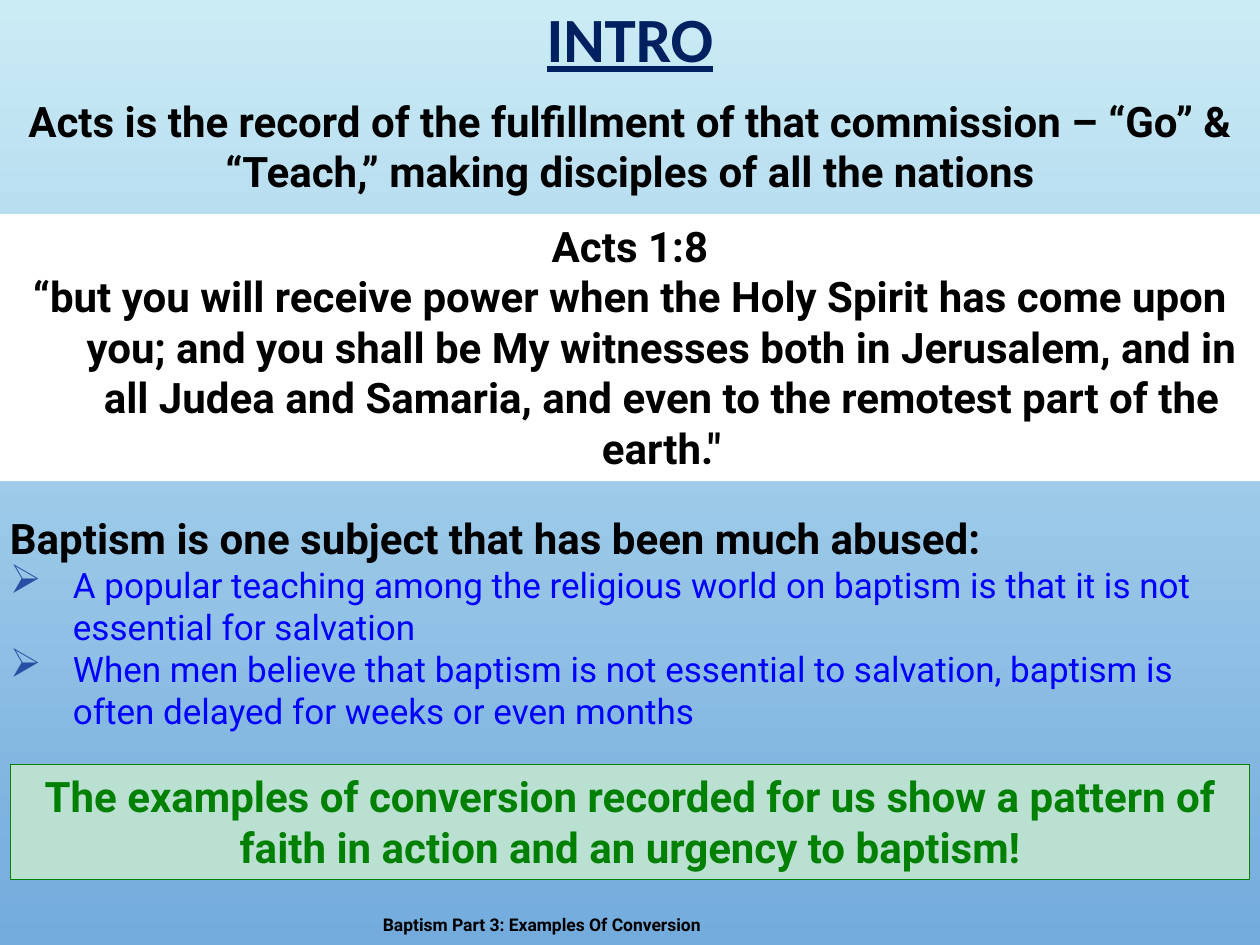
import pptx
import pptx.util
import pptx.dml.color
import pptx.enum.shapes
import pptx.enum.text
import pptx.oxml
import pptx.oxml.ns

Pt = pptx.util.Pt
RGBColor = pptx.dml.color.RGBColor
ALIGN = pptx.enum.text.PP_ALIGN
ANCHOR = pptx.enum.text.MSO_ANCHOR

SKY = RGBColor(0xCB, 0xEC, 0xF5)
STEEL = RGBColor(0x73, 0xAB, 0xDD)
NAVY = RGBColor(0x00, 0x20, 0x60)
BLACK = RGBColor(0x00, 0x00, 0x00)
WHITE = RGBColor(0xFF, 0xFF, 0xFF)
BLUE = RGBColor(0x00, 0x00, 0xFF)
BULLET = RGBColor(0x27, 0x4F, 0xA4)
GREEN = RGBColor(0x00, 0x80, 0x00)
MINT = RGBColor(0xBA, 0xE0, 0xD2)

SLIDE_W, SLIDE_H = 720, 540
HANG = 36


def set_background(s):
    fill = s.background.fill
    fill.gradient()
    fill.gradient_angle = 270
    for stop, color in zip(fill.gradient_stops, (SKY, STEEL)):
        stop.color.rgb = color


def place(sp, left, top, width, height):
    sp.left, sp.top, sp.width, sp.height = map(Pt, (left, top, width, height))


def add_run(p, text, size, color, bold=True, font="Roboto"):
    r = p.add_run()
    r.text = text
    r.font.name = font
    r.font.size = Pt(size)
    r.font.bold = bold
    r.font.color.rgb = color
    return r


def add_paragraph(tf, align=ALIGN.LEFT, hanging=False):
    """Use the empty first paragraph of the frame, or append a new one."""
    p = tf.paragraphs[0] if not tf.paragraphs[0].runs else tf.add_paragraph()
    p.alignment = align
    if hanging:
        pPr = p._p.get_or_add_pPr()
        pPr.set("marL", str(Pt(HANG)))
        pPr.set("indent", str(-Pt(HANG)))
    return p


def add_bullet(p):
    ns = pptx.oxml.ns.nsdecls("a")
    for xml in (
        f'<a:buClr {ns}><a:srgbClr val="{BULLET}"/></a:buClr>',
        f'<a:buSzPct {ns} val="115000"/>',
        f'<a:buChar {ns} char="➢"/>',
    ):
        p._p.get_or_add_pPr().append(pptx.oxml.parse_xml(xml))


def add_title(s, text):
    sp = s.shapes.title
    place(sp, 0, 0, SLIDE_W, 48)
    tf = sp.text_frame
    tf.auto_size = pptx.enum.text.MSO_AUTO_SIZE.NONE
    tf.vertical_anchor = ANCHOR.MIDDLE
    p = add_paragraph(tf, ALIGN.CENTER)
    p.line_spacing = 0.9
    add_run(p, text, 36, NAVY, font="Calibri").font.underline = True


def add_text(s, left, top, width, height, anchor=ANCHOR.TOP):
    sp = s.shapes.add_textbox(Pt(left), Pt(top), Pt(width), Pt(height))
    tf = sp.text_frame
    tf.word_wrap = True
    tf.vertical_anchor = anchor
    return tf


def add_panel(s, left, top, width, height, fill, line=None):
    sp = s.shapes.add_shape(pptx.enum.shapes.MSO_SHAPE.RECTANGLE,
                            Pt(left), Pt(top), Pt(width), Pt(height))
    sp.shadow.inherit = False
    sp.fill.solid()
    sp.fill.fore_color.rgb = fill
    if line is None:
        sp.line.fill.background()
    else:
        sp.line.color.rgb = line
        sp.line.width = Pt(0.75)
    tf = sp.text_frame
    tf.word_wrap = True
    tf.vertical_anchor = ANCHOR.TOP
    return tf


def main():
    prs = pptx.Presentation()
    prs.slide_width, prs.slide_height = Pt(SLIDE_W), Pt(SLIDE_H)
    s = prs.slides.add_slide(prs.slide_layouts[5])
    set_background(s)
    add_title(s, "INTRO")

    footer = add_text(s, 211.7, 516.2, 293.8, 23.8, ANCHOR.MIDDLE)
    add_run(add_paragraph(footer), "Baptism Part 3: Examples Of Conversion", 10, BLACK)

    summary = add_text(s, 0, 51, SLIDE_W, 65.5)
    add_run(add_paragraph(summary, ALIGN.CENTER),
            "Acts is the record of the fulfillment of that commission – “Go” & "
            "“Teach,” making disciples of all the nations", 24, BLACK)

    verse = add_panel(s, 0, 122.4, SLIDE_W, 152.6, WHITE)
    for text in (
        "Acts 1:8",
        "“but you will receive power when the Holy Spirit has come upon you; "
        "and you shall be My witnesses both in Jerusalem, and in all Judea and "
        "Samaria, and even to the remotest part of the earth.\"",
    ):
        add_run(add_paragraph(verse, ALIGN.CENTER, hanging=True), text, 24, BLACK)

    points = add_text(s, -1.4, 289.4, SLIDE_W, 133.2)
    add_run(add_paragraph(points, hanging=True),
            "Baptism is one subject that has been much abused:", 24, BLACK)
    for text in (
        "A popular teaching among the religious world on baptism is that it is "
        "not essential for salvation",
        "When men believe that baptism is not essential to salvation, baptism is "
        "often delayed for weeks or even months",
    ):
        p = add_paragraph(points, hanging=True)
        add_bullet(p)
        add_run(p, text, 20, BLUE, bold=False)

    conclusion = add_panel(s, 6, 437, 708, 65.5, MINT, GREEN)
    add_run(add_paragraph(conclusion, ALIGN.CENTER),
            "The examples of conversion recorded for us show a pattern of "
            "faith in action and an urgency to baptism!", 24, GREEN)

    prs.save("out.pptx")


if __name__ == "__main__":
    main()
